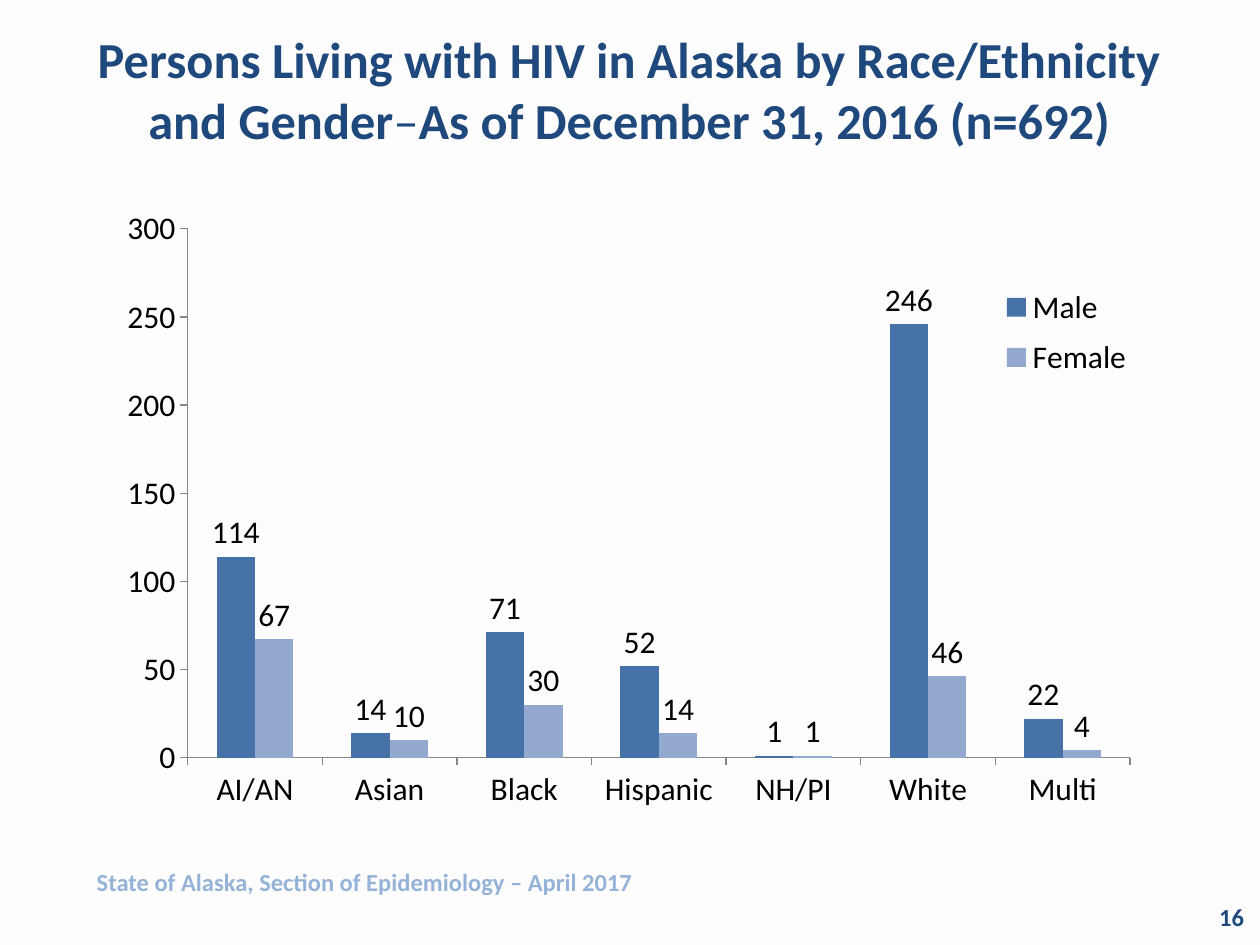
from lxml import etree
from pptx import Presentation
from pptx.chart.data import CategoryChartData
from pptx.dml.color import RGBColor
from pptx.enum.chart import XL_CHART_TYPE, XL_LABEL_POSITION, XL_LEGEND_POSITION, XL_TICK_MARK
from pptx.enum.text import MSO_ANCHOR, PP_ALIGN
from pptx.oxml.ns import qn
from pptx.util import Cm, Pt

CLUSTERED = XL_CHART_TYPE.COLUMN_CLUSTERED
OUTSIDE_END = XL_LABEL_POSITION.OUTSIDE_END
LEGEND_RIGHT = XL_LEGEND_POSITION.RIGHT
TICK_OUT = XL_TICK_MARK.OUTSIDE
TICK_NONE = XL_TICK_MARK.NONE
TOP, MIDDLE = MSO_ANCHOR.TOP, MSO_ANCHOR.MIDDLE
LEFT, CENTER, RIGHT = PP_ALIGN.LEFT, PP_ALIGN.CENTER, PP_ALIGN.RIGHT

FONT = "Calibri"
COLORS = {
    "background": "FDFDFE",
    "title": "1F497D",
    "source": "95B3D7",
    "text": "000000",
    "axis": "868686",
    "Male": "4672A8",
    "Female": "93A9CF",
}
CATEGORIES = ["AI/AN", "Asian", "Black", "Hispanic", "NH/PI", "White", "Multi"]
PERSONS = {
    "Male": [114, 14, 71, 52, 1, 246, 22],
    "Female": [67, 10, 30, 14, 1, 46, 4],
}


class SlideBuilder:
    def __init__(self, slide):
        self.slide = slide
        fill = slide.background.fill
        fill.solid()
        fill.fore_color.rgb = self.color("background")

    def color(self, name):
        return RGBColor.from_string(COLORS[name])

    def text(self, place, spans, size, color, align=LEFT, anchor=TOP):
        box = self.slide.shapes.add_textbox(*map(Cm, place))
        frame = box.text_frame
        frame.word_wrap = True
        frame.vertical_anchor = anchor
        para = frame.paragraphs[0]
        para.alignment = align
        for wording, bold in spans:
            span = para.add_run()
            span.text = wording
            span.font.name = FONT
            span.font.size = Pt(size)
            span.font.bold = bold
            span.font.color.rgb = self.color(color)

    def layout(self, parent, index, place, inner=False):
        for old in parent.findall(qn("c:layout")):
            parent.remove(old)
        layout = etree.Element(qn("c:layout"))
        manual = etree.SubElement(layout, qn("c:manualLayout"))
        values = [("layoutTarget", "inner")] if inner else []
        values += [("xMode", "edge"), ("yMode", "edge")]
        values += zip("xywh", place)
        for tag, value in values:
            etree.SubElement(manual, qn(f"c:{tag}"), val=str(value))
        parent.insert(index, layout)

    def axis(self, axis):
        axis.has_major_gridlines = False
        axis.major_tick_mark = TICK_OUT
        axis.minor_tick_mark = TICK_NONE
        axis.format.line.color.rgb = self.color("axis")
        axis.format.line.width = Pt(0.75)

    def column_chart(self, place, categories, values, size):
        data = CategoryChartData(number_format="0")
        data.categories = categories
        for name, numbers in values.items():
            data.add_series(name, numbers)
        chart = self.slide.shapes.add_chart(CLUSTERED, *map(Cm, place), data).chart
        chart.has_title = False
        chart.font.name = FONT
        chart.font.size = Pt(size)
        chart.font.color.rgb = self.color("text")
        self.axis(chart.category_axis)
        self.axis(chart.value_axis)
        chart.value_axis.minimum_scale = 0
        chart.value_axis.maximum_scale = 300
        chart.value_axis.major_unit = 50

        plot = chart.plots[0]
        plot.gap_width = 150
        plot.overlap = 0
        plot.vary_by_categories = False
        for series in plot.series:
            series.format.fill.solid()
            series.format.fill.fore_color.rgb = self.color(series.name)
            series.data_labels.show_value = True
            series.data_labels.position = OUTSIDE_END

        chart.has_legend = True
        chart.legend.position = LEGEND_RIGHT
        chart.legend.include_in_layout = False
        space = chart.element if hasattr(chart, "element") else chart._chartSpace
        plot_area = space.xpath("c:chart/c:plotArea")[0]
        legend = space.xpath("c:chart/c:legend")[0]
        self.layout(plot_area, 0, (0.11, 0.064, 0.831, 0.848), inner=True)
        self.layout(legend, 1, (0.82, 0.14, 0.13, 0.18))


def main():
    deck = Presentation()
    deck.slide_width = Cm(25.4)
    deck.slide_height = Cm(19.05)
    page = SlideBuilder(deck.slides.add_slide(deck.slide_layouts[6]))

    title = [
        ("Persons Living with HIV in Alaska by Race/Ethnicity and Gender", True),
        ("–", False),
        ("As of December 31, 2016 (n=692)", True),
    ]
    source = [("State of Alaska, Section of Epidemiology – April 2017", True)]
    page.text((0.84, 0.2, 23.7, 3.18), title, 28.8, "title", CENTER, MIDDLE)
    page.column_chart((1.27, 3.81, 22.86, 12.57), CATEGORIES, PERSONS, 18)
    page.text((1.7, 17.35, 17.78, 0.86), source, 14, "source")
    page.text((19.41, 17.98, 5.92, 1.02), [("16", True)], 14, "title", RIGHT, MIDDLE)
    deck.save("out.pptx")


if __name__ == "__main__":
    main()
